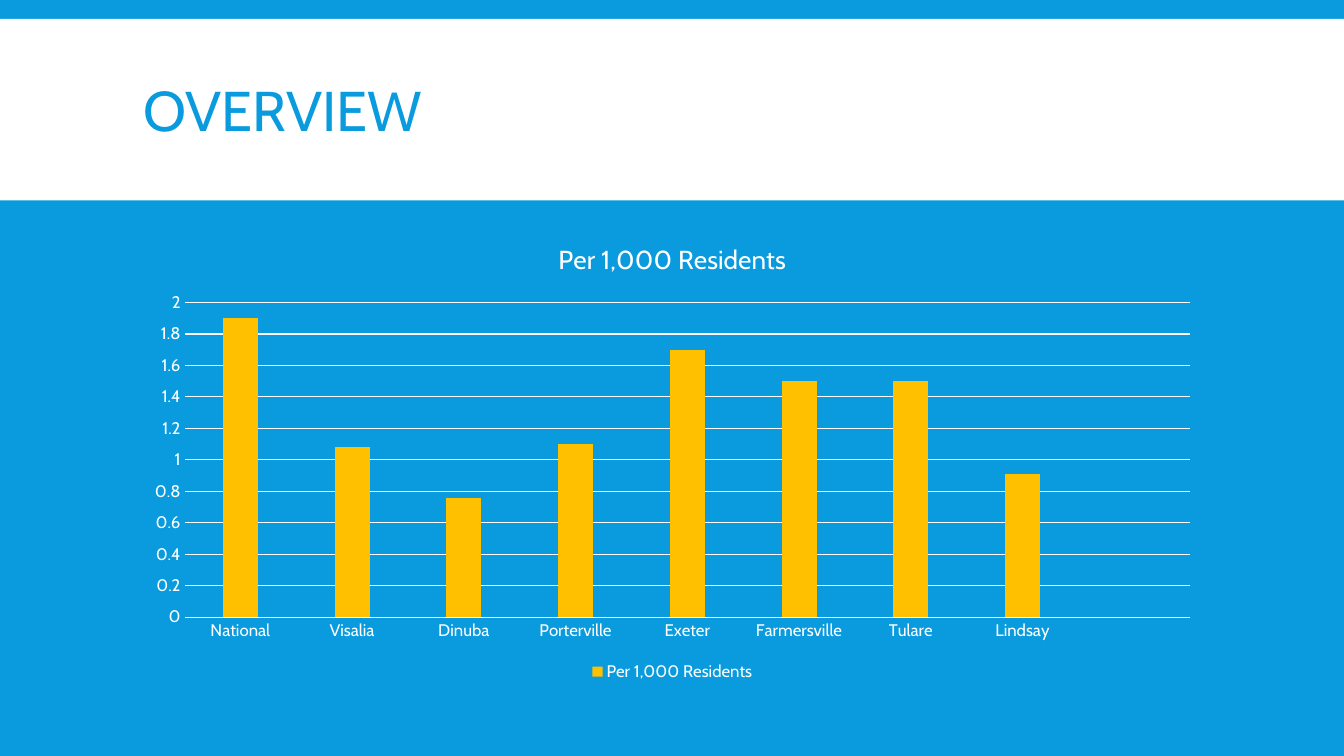
from dataclasses import dataclass

import pptx
import pptx.chart.data
import pptx.dml.color
import pptx.enum.chart
import pptx.enum.shapes
import pptx.enum.text
import pptx.util


@dataclass(frozen=True)
class Theme:
    font: str = "Cabin"
    blue: str = "099BDD"
    white: str = "FFFFFF"
    gold: str = "FFC000"
    title_size: float = 40
    chart_title_size: float = 18.6
    label_size: float = 12
    line_width: float = 0.75


class Slide:
    scale = 9525

    def __init__(self, deck, theme):
        self.theme = theme
        self.page = deck.slides.add_slide(deck.slide_layouts[5])
        self.paint(self.page.background.fill, theme.blue)

    def px(self, *lengths):
        return [pptx.util.Emu(length * self.scale) for length in lengths]

    def paint(self, fill, color):
        fill.solid()
        fill.fore_color.rgb = pptx.dml.color.RGBColor.from_string(color)

    def set_font(self, font, size, color):
        font.name = self.theme.font
        font.size = pptx.util.Pt(size)
        font.bold = False
        font.color.rgb = pptx.dml.color.RGBColor.from_string(color)

    def set_line(self, line):
        self.paint(line.fill, self.theme.white)
        line.width = pptx.util.Pt(self.theme.line_width)

    def band(self, left, top, width, height):
        shape = self.page.shapes.add_shape(
            pptx.enum.shapes.MSO_SHAPE.RECTANGLE, *self.px(left, top, width, height)
        )
        shape.shadow.inherit = False
        self.paint(shape.fill, self.theme.white)
        shape.line.fill.background()

    def title(self, text, left, top, width, height):
        box = self.page.shapes.title
        box.left, box.top, box.width, box.height = self.px(left, top, width, height)
        self.page.shapes.element.append(box.element)
        frame = box.text_frame
        frame.text = text
        frame.word_wrap = True
        frame.auto_size = pptx.enum.text.MSO_AUTO_SIZE.NONE
        frame.vertical_anchor = pptx.enum.text.MSO_ANCHOR.MIDDLE
        para = frame.paragraphs[0]
        para.alignment = pptx.enum.text.PP_ALIGN.LEFT
        para.line_spacing = 0.85
        self.set_font(para.font, self.theme.title_size, self.theme.blue)

    def column_chart(self, name, categories, values, left, top, width, height):
        theme = self.theme
        data = pptx.chart.data.CategoryChartData()
        data.categories = categories
        data.add_series(name, values)
        chart = self.page.shapes.add_chart(
            pptx.enum.chart.XL_CHART_TYPE.COLUMN_CLUSTERED,
            *self.px(left, top, width, height),
            data,
        ).chart
        self.set_font(chart.font, theme.label_size, theme.white)

        chart.has_title = True
        heading = chart.chart_title.text_frame
        heading.text = name
        self.set_font(heading.paragraphs[0].font, theme.chart_title_size, theme.white)
        chart.chart_title.include_in_layout = False

        chart.has_legend = True
        chart.legend.position = pptx.enum.chart.XL_LEGEND_POSITION.BOTTOM
        chart.legend.include_in_layout = False

        for axis in (chart.category_axis, chart.value_axis):
            axis.major_tick_mark = pptx.enum.chart.XL_TICK_MARK.NONE
            axis.minor_tick_mark = pptx.enum.chart.XL_TICK_MARK.NONE
            self.set_font(axis.tick_labels.font, theme.label_size, theme.white)
        self.set_line(chart.category_axis.format.line)
        chart.value_axis.format.line.fill.background()
        chart.value_axis.has_major_gridlines = True
        self.set_line(chart.value_axis.major_gridlines.format.line)
        chart.value_axis.minimum_scale = 0
        chart.value_axis.maximum_scale = 2
        chart.value_axis.major_unit = 0.2

        plot = chart.plots[0]
        plot.vary_by_categories = False
        plot.gap_width = 219
        plot.overlap = -27
        self.paint(plot.series[0].format.fill, theme.gold)


def main():
    deck = pptx.Presentation()
    deck.slide_width, deck.slide_height = pptx.util.Emu(1280 * 9525), pptx.util.Emu(720 * 9525)
    slide = Slide(deck, Theme())
    slide.band(0, 18, 1280, 173)
    slide.title("OVERVIEW", 127, 30, 1027, 158)
    slide.column_chart(
        "Per 1,000 Residents",
        ["National", "Visalia", "Dinuba", "Porterville", "Exeter",
         "Farmersville", "Tulare", "Lindsay", ""],
        [1.9, 1.08, 0.76, 1.1, 1.7, 1.5, 1.5, 0.91, None],
        127, 211, 1027, 442,
    )
    deck.save("out.pptx")


if __name__ == "__main__":
    main()
